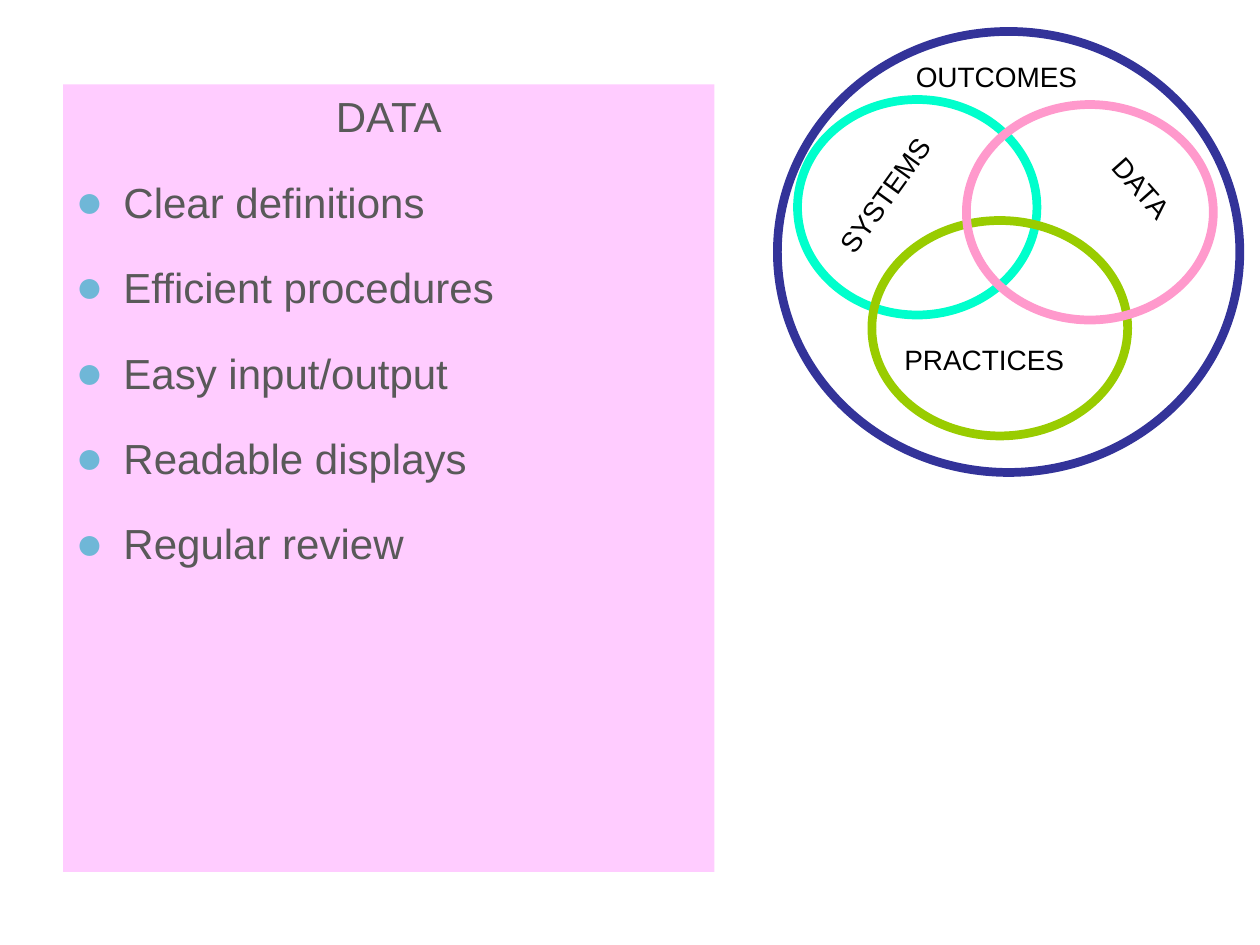
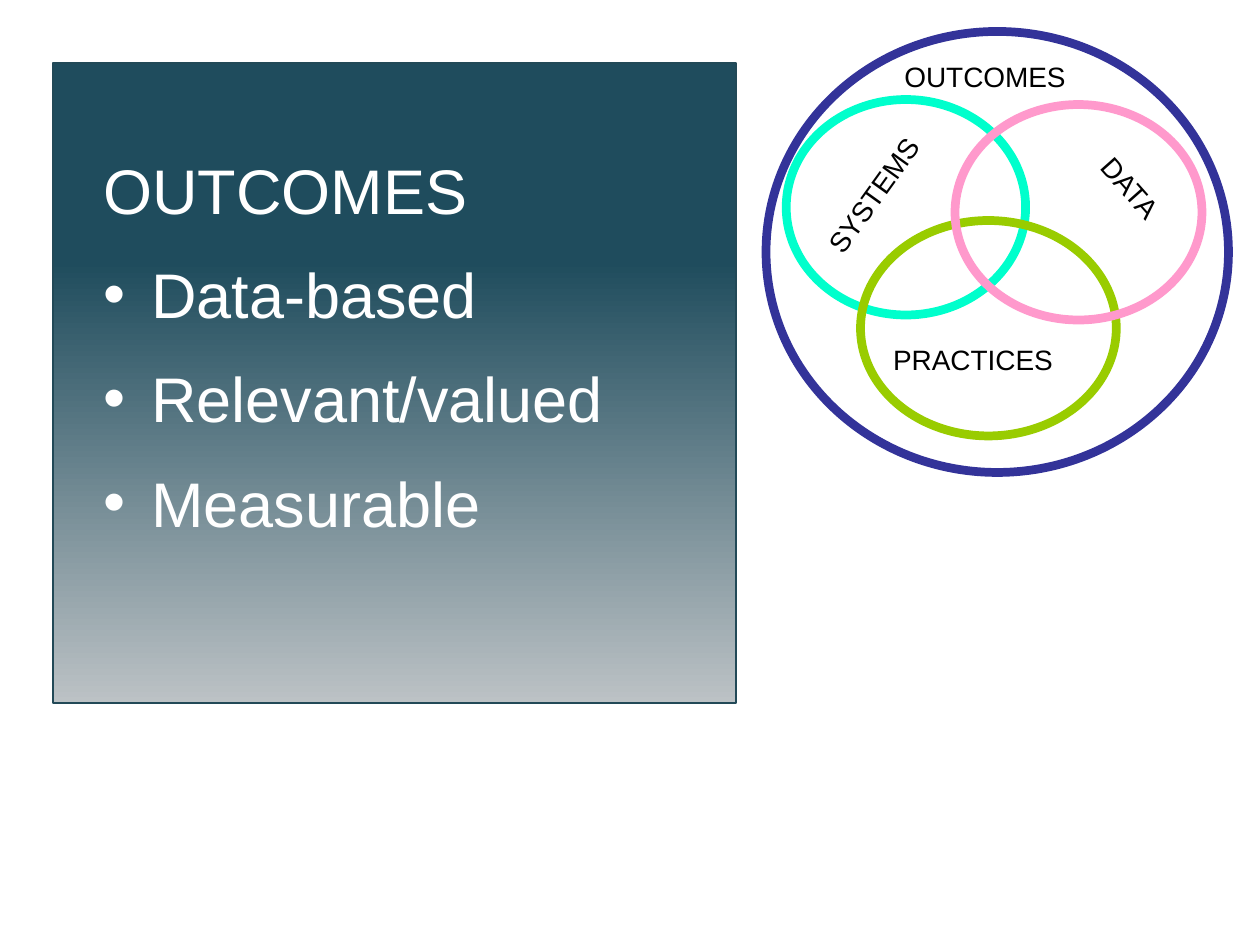
from lxml import etree
from pptx import Presentation
from pptx import util as u
from pptx.dml.color import RGBColor
from pptx.enum import shapes, text
from pptx.oxml import ns

COLORS = {
    "white": "FFFFFF", "black": "000000", "gray": "595959", "bullet": "6FB7D7",
    "navy": "333399", "aqua": "00FFCC", "green": "99CC00", "pink": "FF99CC",
    "data panel": "FFCCFF", "panel top": "1F4C5D", "panel bottom": "BCC2C5",
    "panel line": "224957",
}
INDENT = 0.38


def rgb(name):
    return RGBColor.from_string(COLORS[name])


def write(frame, lines, size=16, color="black", insets=(0.1, 0.05, 0.1, 0.05),
          before=0, after=0, bullet=None, bullet_color=None, bullet_size=100,
          heading_align=text.PP_ALIGN.LEFT):
    """Write lines; with a bullet, the first line is an unbulleted heading."""
    frame.word_wrap = True
    frame.auto_size = text.MSO_AUTO_SIZE.NONE
    frame.vertical_anchor = text.MSO_ANCHOR.TOP
    (frame.margin_left, frame.margin_top,
     frame.margin_right, frame.margin_bottom) = map(u.Inches, insets)
    for index, line in enumerate(lines):
        paragraph = frame.add_paragraph() if index else frame.paragraphs[0]
        paragraph.alignment = text.PP_ALIGN.LEFT if index else heading_align
        paragraph.space_before, paragraph.space_after = u.Pt(before), u.Pt(after)
        run = paragraph.add_run()
        run.text = line
        run.font.name, run.font.size = "Arial", u.Pt(size)
        run.font.color.rgb = rgb(color)
        if not bullet:
            continue
        properties = paragraph._p.get_or_add_pPr()
        properties.set("marL", str(u.Inches(INDENT)))
        properties.set("indent", str(u.Inches(-INDENT)))
        if index == 0:
            etree.SubElement(properties, ns.qn("a:buNone"))
            continue
        bullet_fill = etree.SubElement(properties, ns.qn("a:buClr"))
        etree.SubElement(bullet_fill, ns.qn("a:srgbClr"), val=COLORS[bullet_color or color])
        etree.SubElement(properties, ns.qn("a:buSzPct"), val=str(bullet_size * 1000))
        etree.SubElement(properties, ns.qn("a:buFont"), typeface="Arial")
        etree.SubElement(properties, ns.qn("a:buChar"), char=bullet)


presentation = Presentation()
presentation.slide_width, presentation.slide_height = u.Inches(10), u.Inches(7.5)
data_slide = presentation.slides.add_slide(presentation.slide_layouts[1])
outcomes_slide = presentation.slides.add_slide(presentation.slide_layouts[6])

# Shared diagram: horizontal places count from its left edge
circles = [
    ("navy", 0, 0.25, 3.67, 3.5),
    ("aqua", 0.16, 0.79, 1.9, 1.71),
    ("green", 0.75, 1.75, 2.03, 1.71),
    ("pink", 1.5, 0.83, 1.96, 1.71),
]
labels = [
    ("SYSTEMS", 0.22, 1.36, 1.27, 305.7),
    ("PRACTICES", 0.91, 2.67, 1.66, 0),
    ("DATA", 2.51, 1.31, 0.77, 48.4),
    ("OUTCOMES", 1, 0.42, 1.67, 0),
]
for slide, diagram_left in ((data_slide, 6.17), (outcomes_slide, 6.08)):
    for color, left, top, width, height in circles:
        circle = slide.shapes.add_shape(
            shapes.MSO_SHAPE.OVAL, u.Inches(diagram_left + left), u.Inches(top),
            u.Inches(width), u.Inches(height))
        circle.shadow.inherit = False
        circle.line.color.rgb, circle.line.width = rgb(color), u.Pt(5)
        if color == "navy":
            circle.fill.solid()
            circle.fill.fore_color.rgb = rgb("white")
            fill_color = circle._element.spPr.find(ns.qn("a:solidFill"))[0]
            etree.SubElement(fill_color, ns.qn("a:alpha"), val="50000")
        else:
            circle.fill.background()
    for label, left, top, width, rotation in labels:
        box = slide.shapes.add_textbox(
            u.Inches(diagram_left + left), u.Inches(top), u.Inches(width), u.Inches(0.37))
        box.rotation = rotation
        write(box.text_frame, [label], insets=(0.1, 0.05, 0, 0.05))

# Data panel
title = data_slide.shapes.title._element
title.getparent().remove(title)
data_panel = data_slide.placeholders[1]
data_panel.left, data_panel.top = u.Inches(0.5), u.Inches(0.67)
data_panel.width, data_panel.height = u.Inches(5.17), u.Inches(6.25)
data_panel.fill.solid()
data_panel.fill.fore_color.rgb = rgb("data panel")
write(data_panel.text_frame,
      ["DATA", "Clear definitions", "Efficient procedures", "Easy input/output",
       "Readable displays", "Regular review"],
      size=24, color="gray", before=20, bullet="●", bullet_color="bullet",
      bullet_size=110, heading_align=text.PP_ALIGN.CENTER)
# Bring the panel in front of the diagram
data_slide.shapes._spTree.append(data_panel._element)

# Outcomes panel
outcomes_panel = outcomes_slide.shapes.add_shape(
    shapes.MSO_SHAPE.RECTANGLE, u.Inches(0.42), u.Inches(0.5), u.Inches(5.42), u.Inches(5.08))
outcomes_panel.shadow.inherit = False
outcomes_panel.line.color.rgb, outcomes_panel.line.width = rgb("panel line"), u.Pt(1)
outcomes_panel.fill.gradient()
outcomes_panel.fill.gradient_angle = 270
stops = (("panel top", 0.31), ("panel bottom", 1))
for stop, (color, position) in zip(outcomes_panel.fill.gradient_stops, stops):
    stop.color.rgb, stop.position = rgb(color), position
write(outcomes_panel.text_frame,
      ["OUTCOMES", "Data-based", "Relevant/valued", "Measurable"],
      size=36, color="white", insets=(0.4, 0.7, 0.1, 0.05),
      before=8.2, after=8.2, bullet="•")

presentation.save("out.pptx")
